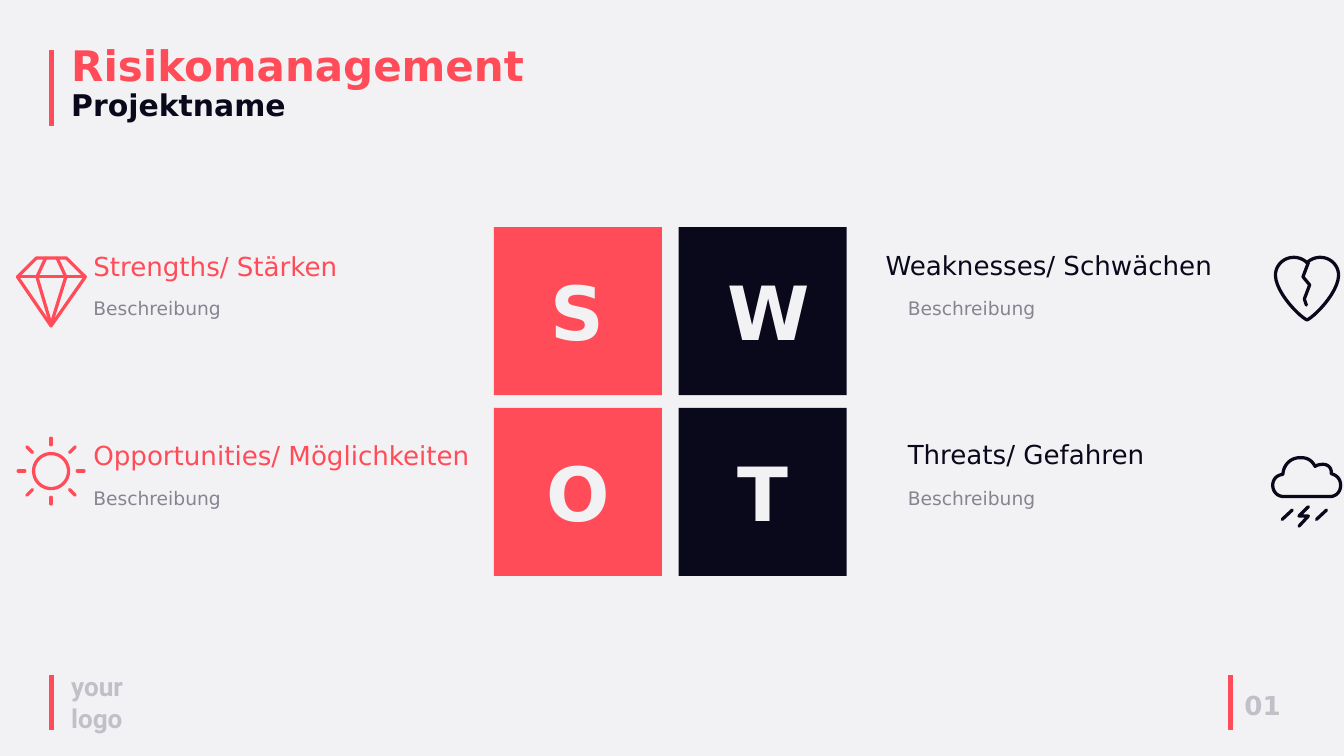
import math

from lxml import etree
from pptx import Presentation, util as u
from pptx.dml.color import RGBColor
from pptx.enum import shapes, text
from pptx.oxml.ns import qn

COLORS = {
    "paper": "F2F2F5",
    "coral": "FF4C58",
    "navy": "0A091B",
    "gray": "858591",
    "silver": "C0C0C8",
}
COLUMNS, ROWS = 20, 11.25
CELL = u.Inches(1)
FONT = "DejaVu Sans"

TILE = 2.5
TILE_COLUMNS, TILE_ROWS = (7.35, 10.1), (3.38, 6.07)
DESCRIPTION_COLUMNS, DESCRIPTION_ROWS = (1.29, 13.41), (4.37, 7.19)
ICON_STROKE, BAR_STROKE = 3.5, 5

# Strokes in cells from the icon's corner: a pair is a straight step,
# six numbers are a Bézier step (two controls, then the end).
DIAMOND = [
    [(0.03, 0.31), (0.31, 0.03), (0.76, 0.03), (1.04, 0.31), (0.53, 1.04), (0.03, 0.31)],
    [(0.03, 0.31), (1.04, 0.31)],
    [(0.45, 0.03), (0.32, 0.31), (0.53, 1.02), (0.75, 0.31), (0.62, 0.03)],
]
HEART = [
    [(0.49, 0.1), (0.44, 0.05, 0.37, 0.02, 0.29, 0.02),
     (0.14, 0.02, 0.02, 0.14, 0.02, 0.29), (0.03, 0.56, 0.4, 0.92, 0.49, 0.95),
     (0.58, 0.92, 0.95, 0.56, 0.96, 0.29), (0.96, 0.14, 0.84, 0.02, 0.69, 0.02),
     (0.61, 0.02, 0.54, 0.05, 0.49, 0.1)],
    [(0.51, 0.1), (0.43, 0.31), (0.53, 0.43), (0.45, 0.64), (0.48, 0.73)],
]
STORM = [
    [(0.2, 0.61), (0.1, 0.61, 0.03, 0.54, 0.03, 0.44),
     (0.03, 0.36, 0.08, 0.29, 0.18, 0.28), (0.19, 0.13, 0.3, 0.03, 0.44, 0.03),
     (0.55, 0.03, 0.61, 0.07, 0.66, 0.16), (0.69, 0.14, 0.73, 0.13, 0.78, 0.13),
     (0.85, 0.13, 0.91, 0.18, 0.9, 0.27), (0.99, 0.29, 1.04, 0.36, 1.04, 0.44),
     (1.04, 0.54, 0.97, 0.61, 0.88, 0.61), (0.2, 0.61)],
    [(0.17, 0.95), (0.32, 0.81)],
    [(0.68, 0.95), (0.83, 0.81)],
    [(0.56, 0.76), (0.42, 0.9), (0.56, 0.9), (0.42, 1.05)],
]


def cells(*lengths):
    return [round(length * CELL) for length in lengths]


def rgb(color):
    return RGBColor.from_string(COLORS[color])


def format_line(shape, color, width):
    shape.line.color.rgb = rgb(color)
    shape.line.width = u.Pt(width)
    etree.SubElement(shape.element.spPr, qn("a:effectLst"))


def add_bar(slide, x, top, bottom):
    bar = slide.shapes.add_connector(
        shapes.MSO_CONNECTOR.STRAIGHT, *cells(x, top, x, bottom))
    format_line(bar, "coral", BAR_STROKE)


def add_run(paragraph, words, size, color, bold=False, font=FONT):
    run = paragraph.add_run()
    run.text = words
    run.font.name, run.font.size, run.font.bold = font, u.Pt(size), bold
    run.font.color.rgb = rgb(color)


def add_text(slide, box, words, align=text.PP_ALIGN.LEFT, **style):
    frame = slide.shapes.add_textbox(*cells(*box)).text_frame
    frame.word_wrap = True
    frame.paragraphs[0].alignment = align
    add_run(frame.paragraphs[0], words, **style)


def flatten(stroke, steps=12):
    """Return the stroke's points with each Bézier step cut into short lines."""
    points = [stroke[0]]
    for step in stroke[1:]:
        if len(step) == 2:
            points.append(step)
            continue
        controls = [points[-1], step[:2], step[2:4], step[4:]]
        for i in range(1, steps + 1):
            t = i / steps
            weights = [math.comb(3, k) * t**k * (1 - t) ** (3 - k) for k in range(4)]
            points.append(tuple(
                sum(w * c[axis] for w, c in zip(weights, controls)) for axis in (0, 1)))
    return points


def sun_strokes(x=0.52, y=0.53, disc=0.26, rays=8, disc_points=48):
    def polar(radius, turn):
        angle = 2 * math.pi * turn
        return x + radius * math.cos(angle), y + radius * math.sin(angle)

    circle = [polar(disc, i / disc_points) for i in range(disc_points)]
    strokes = [circle + circle[:1]]
    for ray in range(rays):
        outer = 0.51 if ray % 2 else 0.49
        strokes.append([polar(0.39, ray / rays), polar(outer, ray / rays)])
    return strokes


def draw_icon(slide, corner, color, strokes):
    """Draw all strokes as one outline with round ends."""
    left, top = corner
    builder = None
    for stroke in strokes:
        points = [cells(left + x, top + y) for x, y in flatten(stroke)]
        if builder is None:
            builder = slide.shapes.build_freeform(*points[0])
        else:
            builder.move_to(*points[0])
        builder.add_line_segments(points[1:], close=points[0] == points[-1])
    icon = builder.convert_to_shape()
    icon.fill.background()
    format_line(icon, color, ICON_STROKE)
    outline = icon.element.spPr.find(qn("a:ln"))
    outline.set("cap", "rnd")
    etree.SubElement(outline, qn("a:round"))


def add_header(slide):
    add_bar(slide, 0.77, 0.75, 1.88)
    title = slide.shapes.title
    title.left, title.top, title.width, title.height = cells(0.96, 0.62, 7.38, 1.27)
    frame = title.text_frame
    frame.auto_size = text.MSO_AUTO_SIZE.NONE
    frame.vertical_anchor = text.MSO_ANCHOR.MIDDLE
    heading = frame.paragraphs[0]
    heading.alignment, heading.line_spacing = text.PP_ALIGN.LEFT, 0.9
    add_run(heading, "Risikomanagement", size=45, color="coral", bold=True)
    heading.add_line_break()
    add_run(heading, "Projektname", size=32, color="navy", bold=True)


def add_footer(slide):
    for x in (0.77, 18.31):
        add_bar(slide, x, 10.05, 10.86)
    style = dict(size=28, color="silver", bold=True)
    add_text(slide, (0.96, 9.93, 1.19, 1.04), "your logo", font="Roboto", **style)
    add_text(slide, (18.42, 10.21, COLUMNS - 18.42, 0.57), "01", **style)


def add_tile(slide, left, top, letter, color):
    tile = slide.shapes.add_shape(shapes.MSO_SHAPE.RECTANGLE, *cells(left, top, TILE, TILE))
    tile.shadow.inherit = False
    tile.fill.solid()
    tile.fill.fore_color.rgb = rgb(color)
    tile.line.fill.background()
    width, height = 1.23, 1.45
    add_text(slide, (left + (TILE - width) / 2, top + (TILE - height) / 2, width, height),
             letter, align=text.PP_ALIGN.CENTER, size=80, color="paper", bold=True)


def add_quadrant(slide, column, row, letter, heading, heading_box, icon, icon_corner):
    color = ("coral", "navy")[column]
    add_tile(slide, TILE_COLUMNS[column], TILE_ROWS[row], letter, color)
    add_text(slide, heading_box, heading, size=28, color=color)
    width = (5.97, 3.98)[column]
    add_text(slide, (DESCRIPTION_COLUMNS[column], DESCRIPTION_ROWS[row], width, 0.44),
             "Beschreibung", size=20, color="gray")
    draw_icon(slide, icon_corner, color, icon)


def main():
    deck = Presentation()
    deck.slide_width, deck.slide_height = cells(COLUMNS, ROWS)
    slide = deck.slides.add_slide(deck.slide_layouts.get_by_name("Title Only"))
    slide.background.fill.solid()
    slide.background.fill.fore_color.rgb = rgb("paper")

    add_header(slide)
    add_quadrant(slide, 0, 0, "S", "Strengths/ Stärken",
                 (1.29, 3.67, 4.52, 0.57), DIAMOND, (0.23, 3.81))
    add_quadrant(slide, 1, 0, "W", "Weaknesses/ Schwächen",
                 (13.08, 3.66, 5.42, 0.57), HEART, (18.96, 3.81))
    add_quadrant(slide, 0, 1, "O", "Opportunities/ Möglichkeiten",
                 (1.29, 6.49, 7.18, 0.57), sun_strokes(), (0.24, 6.48))
    add_quadrant(slide, 1, 1, "T", "Threats/ Gefahren",
                 (13.41, 6.48, 3.98, 0.57), STORM, (18.91, 6.78))
    add_footer(slide)
    deck.save("out.pptx")


if __name__ == "__main__":
    main()
